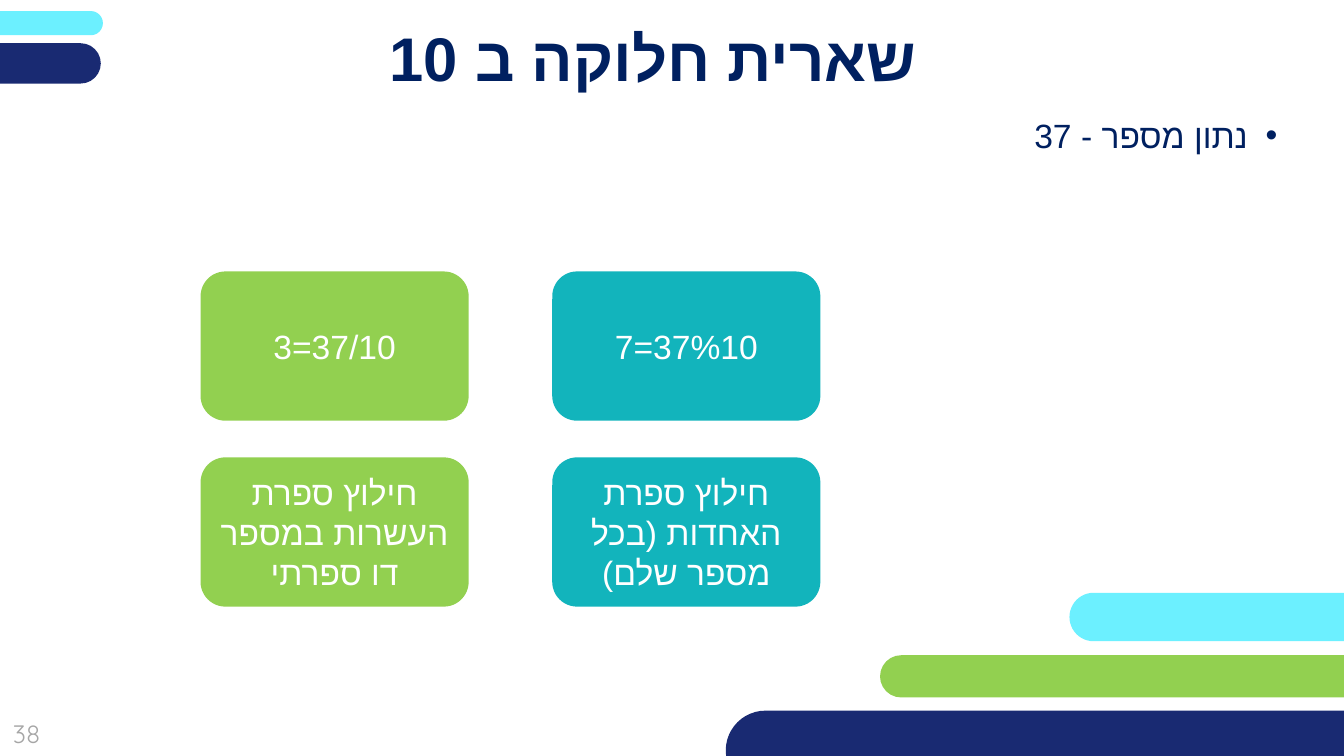
from lxml import etree
from pptx import Presentation
from pptx.dml.color import RGBColor
from pptx.enum import shapes, text
from pptx.oxml import ns
from pptx.util import Pt

NAVY, CYAN, GREEN, TEAL = "192A72", "6CF0FF", "92D050", "12B4BC"
INK, GREY, WHITE = "002060", "A6A6A6", "FFFFFF"
CENTER, RIGHT = text.PP_ALIGN.CENTER, text.PP_ALIGN.RIGHT


def add_block(kind, box, color):
    sp = s.shapes.add_shape(kind, *map(Pt, box))
    sp.shadow.inherit = False
    sp.fill.solid()
    sp.fill.fore_color.rgb = RGBColor.from_string(color)
    sp.line.fill.background()
    return sp


def write(sp, wording, size, color, align=CENTER, rtl=True, bold=False):
    tf = sp.text_frame
    tf.word_wrap = True
    tf.text = wording
    p = tf.paragraphs[0]
    p.alignment = align
    r = p.runs[0]
    r.font.name = "Quicksand"
    r.font.size = Pt(size)
    r.font.bold = bold
    r.font.color.rgb = RGBColor.from_string(color)
    if rtl:
        p._p.get_or_add_pPr().set("rtl", "1")
        cs = etree.SubElement(r.font._element, ns.qn("a:cs"))
        cs.set("typeface", "Arial")
    return tf


prs = Presentation()
prs.slide_width, prs.slide_height = Pt(960), Pt(540)
s = prs.slides.add_slide(prs.slide_layouts[6])

bars = [
    ((518.4, 507.6, 471.6, 56.9), NAVY),
    ((763.9, 423.4, 275, 34.6), CYAN),
    ((-96.5, 7.9, 170, 17.3), CYAN),
    ((-162, 30.9, 234, 28.8), NAVY),
    ((628.6, 468, 375.1, 30.2), GREEN),
]
for box, color in bars:
    bar = add_block(shapes.MSO_SHAPE.ROUNDED_RECTANGLE, box, color)
    bar.adjustments[0] = 0.5

number = s.shapes.add_textbox(Pt(-13), Pt(503.3), Pt(64), Pt(41))
tf = write(number, "38", 18, GREY, rtl=False)
tf.vertical_anchor = text.MSO_ANCHOR.MIDDLE

body = s.shapes.add_textbox(Pt(40.3), Pt(78.5), Pt(879.1), Pt(319.7))
tf = write(body, "נתון מספר - 37", 24, INK, RIGHT)
p = tf.paragraphs[0]
pPr = p._p.get_or_add_pPr()
pPr.set("marL", str(Pt(21)))
pPr.set("indent", str(-Pt(21)))
etree.SubElement(pPr, ns.qn("a:buFont")).set("typeface", "Arial")
etree.SubElement(pPr, ns.qn("a:buChar")).set("char", "•")
p.space_after = Pt(6)

title = s.shapes.add_textbox(Pt(80.6), Pt(12.2), Pt(771.8), Pt(56.9))
tf = write(title, "שארית חלוקה ב 10", 44, INK, bold=True)
tf.margin_left = tf.margin_top = tf.margin_right = tf.margin_bottom = 0
tf.vertical_anchor = text.MSO_ANCHOR.MIDDLE

columns = [
    (GREEN, ["37/10=3", "חילוץ ספרת העשרות במספר דו ספרתי"]),
    (TEAL, ["37%10=7", "חילוץ ספרת האחדות (בכל מספר שלם)"]),
]
for col, (color, cells) in enumerate(columns):
    for row, wording in enumerate(cells):
        box = (143.3 + 251.2 * col, 193.9 + 132.8 * row, 191.5, 106.6)
        card = add_block(shapes.MSO_SHAPE.FLOWCHART_ALTERNATE_PROCESS, box, color)
        tf = write(card, wording, 24, WHITE)
        tf.vertical_anchor = text.MSO_ANCHOR.MIDDLE

prs.save("out.pptx")
